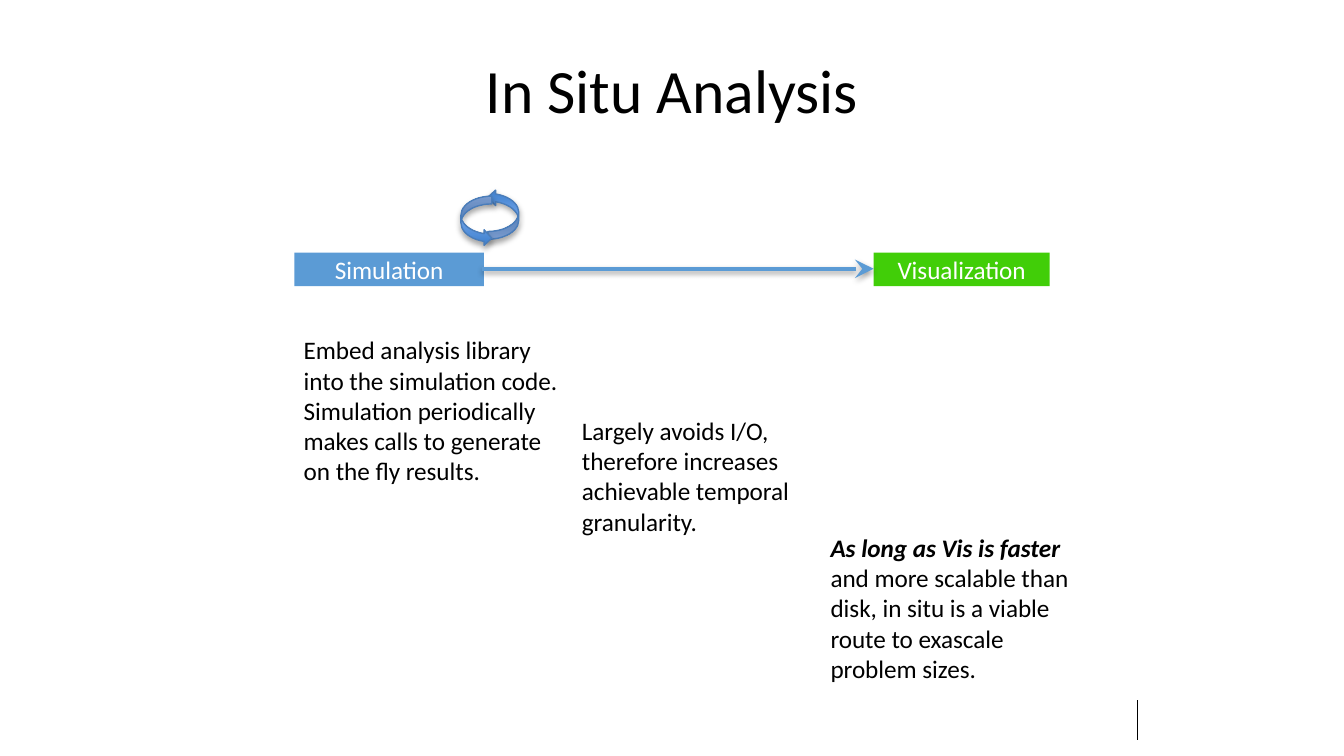
from lxml import etree
from pptx import Presentation
from pptx.dml.color import RGBColor
from pptx.enum.shapes import MSO_CONNECTOR, MSO_SHAPE
from pptx.enum.text import MSO_ANCHOR, PP_ALIGN
from pptx.oxml.ns import qn
from pptx.util import Inches, Pt

CENTER = PP_ALIGN.CENTER
MIDDLE = MSO_ANCHOR.MIDDLE
RECTANGLE = MSO_SHAPE.RECTANGLE
CURVED_ARROW = MSO_SHAPE.CURVED_RIGHT_ARROW
STRAIGHT = MSO_CONNECTOR.STRAIGHT
FONT = "Calibri"
BODY_SIZE = 13.5
BLUE, GREEN, BLACK, WHITE = "5B9BD5", "41CE08", "000000", "FFFFFF"


def color(value):
    """Turn a hex string into a colour."""
    return RGBColor.from_string(value)


def place(shape, left, top, width, height):
    """Move and size a shape, in inches."""
    shape.left, shape.top = Inches(left), Inches(top)
    shape.width, shape.height = Inches(width), Inches(height)


def format_text(shape, size, ink, align=None, anchor=None):
    """Set the margins, alignment and font of a shape's text."""
    frame = shape.text_frame
    frame.word_wrap = True
    frame.margin_left = frame.margin_right = Inches(0.07)
    frame.margin_top = frame.margin_bottom = Inches(0.04)
    frame.vertical_anchor = anchor
    for para in frame.paragraphs:
        para.alignment = align
        for span in para.runs:
            span.font.name = FONT
            span.font.size = Pt(size)
            span.font.color.rgb = color(ink)


def set_effects(properties, distance=0, opacity=0):
    """Give shape properties a downward soft shadow, or none."""
    effects = properties.find(qn("a:effectLst"))
    if effects is None:
        effects = etree.SubElement(properties, qn("a:effectLst"))
    if distance:
        shadow = etree.SubElement(
            effects, qn("a:outerShdw"), blurRad=str(Pt(3.1)),
            dist=str(Pt(distance)), dir="5400000", rotWithShape="0")
        ink = etree.SubElement(shadow, qn("a:srgbClr"), val=BLACK)
        etree.SubElement(ink, qn("a:alpha"), val=str(opacity * 1000))


def add_title(page, text, left, top, width, height):
    """Fill the title placeholder."""
    title = page.shapes.title
    place(title, left, top, width, height)
    title.text_frame.text = text
    format_text(title, 33, BLACK, CENTER, MIDDLE)
    title.text_frame.paragraphs[0].line_spacing = 0.9


def add_stage(page, text, fill, left, top, width, height):
    """Add one labelled stage of the pipeline."""
    box = page.shapes.add_shape(
        RECTANGLE, Inches(left), Inches(top), Inches(width), Inches(height))
    box.shadow.inherit = False
    box.fill.solid()
    box.fill.fore_color.rgb = color(fill)
    box.line.fill.background()
    box.text_frame.text = text
    format_text(box, BODY_SIZE, WHITE, CENTER, MIDDLE)


def add_line(page, start, end, ink, width):
    """Add a straight line without effects."""
    line = page.shapes.add_connector(
        STRAIGHT, *(Inches(value) for value in start + end))
    line.line.color.rgb = color(ink)
    line.line.width = Pt(width)
    set_effects(line._element.spPr)
    return line


def add_flow(page, start, end):
    """Add the shadowed arrow between the stages."""
    flow = add_line(page, start, end, BLUE, 2)
    etree.SubElement(flow.line._get_or_add_ln(), qn("a:tailEnd"),
                     type="stealth", w="lg", len="lg")
    set_effects(flow._element.spPr, 1.6, 38)


def add_cycle(page, left, top):
    """Add two curved arrows that chase each other."""
    cycle = page.shapes.add_group_shape()
    for across, down, rotation in ((0.2, 0, 180), (0, 0.05, 0)):
        arrow = cycle.shapes.add_shape(
            CURVED_ARROW, Inches(left + across), Inches(top + down),
            Inches(0.23), Inches(0.37))
        arrow.rotation = rotation
        arrow.fill.gradient()
        arrow.fill.gradient_angle = 90
        for stop, shade in zip(arrow.fill.gradient_stops, ("3E7FCD", "96C0FF")):
            stop.color.rgb = color(shade)
        arrow.line.color.rgb = color("4A7DBA")
        arrow.line.width = Pt(0.75)
        arrow.shadow.inherit = False
        set_effects(arrow._element.spPr, 1.8, 35)


def add_note(page, text, left, top, width, height, lead=""):
    """Add a remark, optionally opened by an emphasised lead."""
    note = page.shapes.add_textbox(
        Inches(left), Inches(top), Inches(width), Inches(height))
    para = note.text_frame.paragraphs[0]
    if lead:
        opening = para.add_run()
        opening.text = lead
        opening.font.bold = opening.font.italic = True
    para.add_run().text = text
    format_text(note, BODY_SIZE, BLACK)


def build_analysis(page):
    """Lay out the in situ pipeline and its remarks."""
    add_line(page, (8.46, 5.21), (8.46, 5.51), BLACK, 0.5)
    add_stage(page, "Simulation", BLUE, 2.19, 1.88, 1.41, 0.25)
    add_stage(page, "Visualization", GREEN, 6.5, 1.88, 1.31, 0.25)
    add_flow(page, (3.59, 2), (6.5, 2))
    add_cycle(page, 3.43, 1.41)
    add_title(page, "In Situ Analysis", 0.69, 0.3, 8.62, 0.79)
    add_note(page, "Embed analysis library into the simulation code. Simulation "
             "periodically makes calls to generate on the fly results.",
             2.19, 2.45, 2.07, 1.21)
    add_note(page, "and more scalable than disk, in situ is a viable route to "
             "exascale problem sizes.", 6.11, 3.92, 2.07, 1.21,
             lead="As long as Vis is faster ")
    add_note(page, "Largely avoids I/O, therefore increases achievable temporal "
             "granularity.", 4.26, 3.05, 2.11, 0.98)


def main():
    """Build and save the deck."""
    deck = Presentation()
    deck.slide_width = Inches(10)
    deck.slide_height = deck.slide_width * 9 // 16
    build_analysis(deck.slides.add_slide(deck.slide_layouts[5]))
    deck.save("out.pptx")


if __name__ == "__main__":
    main()
